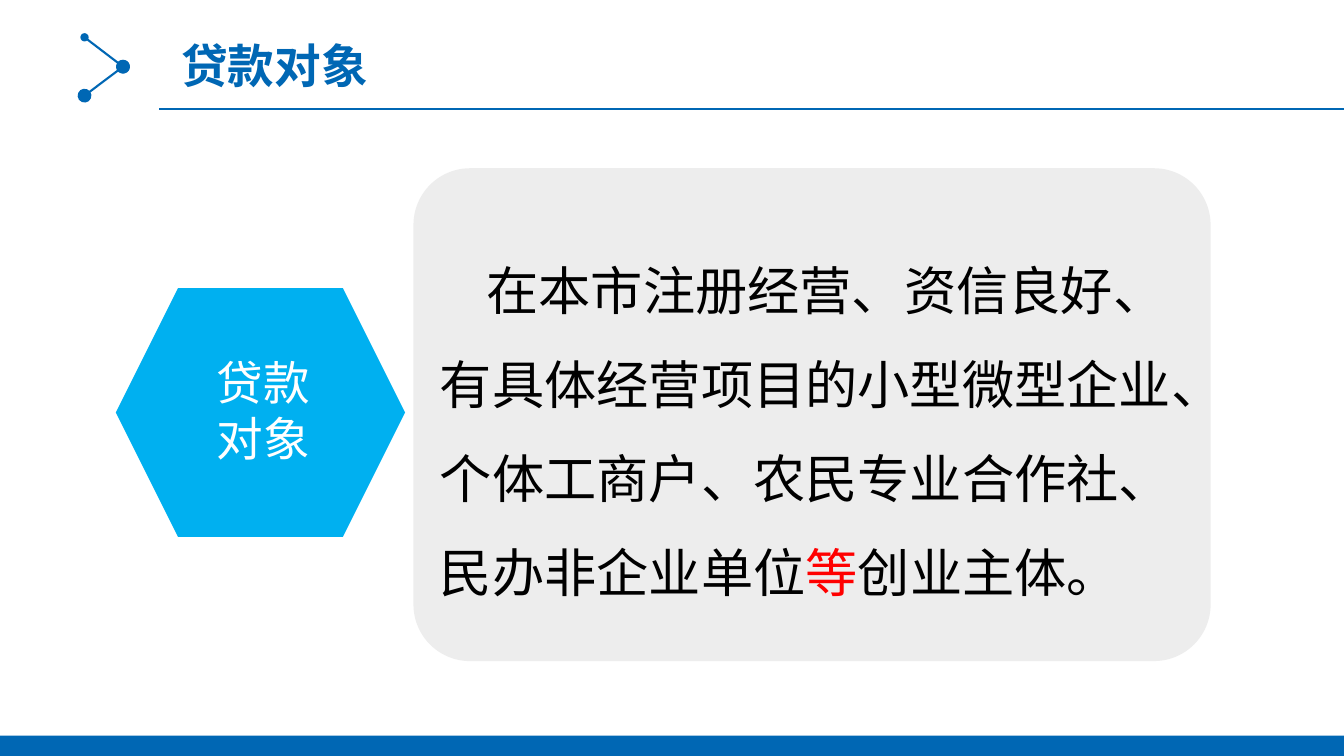
"""Build the slide on who may apply for the loan."""
from lxml import etree
from pptx import Presentation
from pptx.dml.color import RGBColor
from pptx.enum.shapes import MSO_CONNECTOR, MSO_SHAPE
from pptx.enum.text import MSO_ANCHOR, PP_ALIGN
from pptx.oxml.ns import qn
from pptx.util import Cm, Pt

STRAIGHT = MSO_CONNECTOR.STRAIGHT
RECTANGLE, HEXAGON, ROUNDED = MSO_SHAPE.RECTANGLE, MSO_SHAPE.HEXAGON, MSO_SHAPE.ROUNDED_RECTANGLE
TOP, MIDDLE, LEFT = MSO_ANCHOR.TOP, MSO_ANCHOR.MIDDLE, PP_ALIGN.LEFT
CJK_FONT = "Noto Sans CJK SC"
COLORS = {"blue": "0067B4", "sky": "00B0F0", "panel": "EDEDED",
          "white": "FFFFFF", "black": "000000", "red": "FF0000"}

prs = Presentation()
prs.slide_width, prs.slide_height = Cm(33.87), Cm(19.05)
slide = prs.slides.add_slide(prs.slide_layouts[5])


def style_run(run, size, color, latin=CJK_FONT, bold=False):
    run.font.size = Pt(size)
    run.font.bold = bold
    run.font.name = latin
    run.font.color.rgb = RGBColor.from_string(COLORS[color])
    etree.SubElement(run.font._element, qn("a:ea"), typeface=CJK_FONT)


def set_margins(frame, side, edge):
    frame.margin_left = frame.margin_right = Cm(side)
    frame.margin_top = frame.margin_bottom = Cm(edge)


blocks = []
for kind, color, box in [
    (RECTANGLE, "blue", (0, 18.54, 33.87, 0.51)),
    (HEXAGON, "sky", (2.92, 7.26, 7.29, 6.27)),
    (ROUNDED, "panel", (10.42, 4.24, 20.09, 12.42)),
]:
    block = slide.shapes.add_shape(kind, *map(Cm, box))
    block.shadow.inherit = False
    block.fill.solid()
    block.fill.fore_color.rgb = RGBColor.from_string(COLORS[color])
    block.line.fill.background()
    blocks.append(block)

for start, end, width, dots in [
    ((2.13, 0.94), (3.1, 1.68), 1.5, ("med", "lg")),
    ((3.1, 1.68), (2.13, 2.41), 1.5, ("lg", "lg")),
    ((4.01, 2.75), (33.87, 2.75), 1, ()),
]:
    stroke = slide.shapes.add_connector(STRAIGHT, *map(Cm, start + end))
    stroke.line.color.rgb = RGBColor.from_string(COLORS["blue"])
    stroke.line.width = Pt(width)
    outline = stroke.line._get_or_add_ln()
    for tag, dot in zip(("a:headEnd", "a:tailEnd"), dots):
        etree.SubElement(outline, qn(tag), type="oval", w=dot, len=dot)
    etree.SubElement(stroke._element.spPr, qn("a:effectLst"))

heading = slide.shapes.title
heading.left, heading.top, heading.width, heading.height = map(Cm, (4.24, 0.74, 5.44, 1.78))
heading_frame = heading.text_frame
heading_frame.text = "贷款对象"
heading_frame.word_wrap = False
heading_frame.vertical_anchor = TOP
heading_frame.paragraphs[0].alignment = LEFT
set_margins(heading_frame, 0.33, 0.18)
style_run(heading_frame.paragraphs[0].runs[0], 33.3, "blue", "Arial", True)

hexagon_label = slide.shapes.add_textbox(*map(Cm, (5.13, 8.74, 3.1, 3.2))).text_frame
hexagon_label.text = "贷款对象"
hexagon_label.word_wrap = True
set_margins(hexagon_label, 0.33, 0.18)
style_run(hexagon_label.paragraphs[0].runs[0], 33.3, "white")

panel = blocks[-1]
panel.adjustments[0] = 0.115
panel.text_frame.word_wrap = True
panel.text_frame.vertical_anchor = MIDDLE
set_margins(panel.text_frame, 0.25, 0.13)
eligibility = panel.text_frame.paragraphs[0]
eligibility.alignment = LEFT
eligibility.line_spacing = 1.5
eligibility._p.get_or_add_pPr().set("indent", str(Cm(1.17)))
for words, color in [
    ("在本市注册经营、资信良好、有具体经营项目的小型微型企业、个体工商户、农民专业合作社、民办非企业单位", "black"),
    ("等", "red"),
    ("创业主体。", "black"),
]:
    part = eligibility.add_run()
    part.text = words
    style_run(part, 37.3, color)

prs.save("out.pptx")
